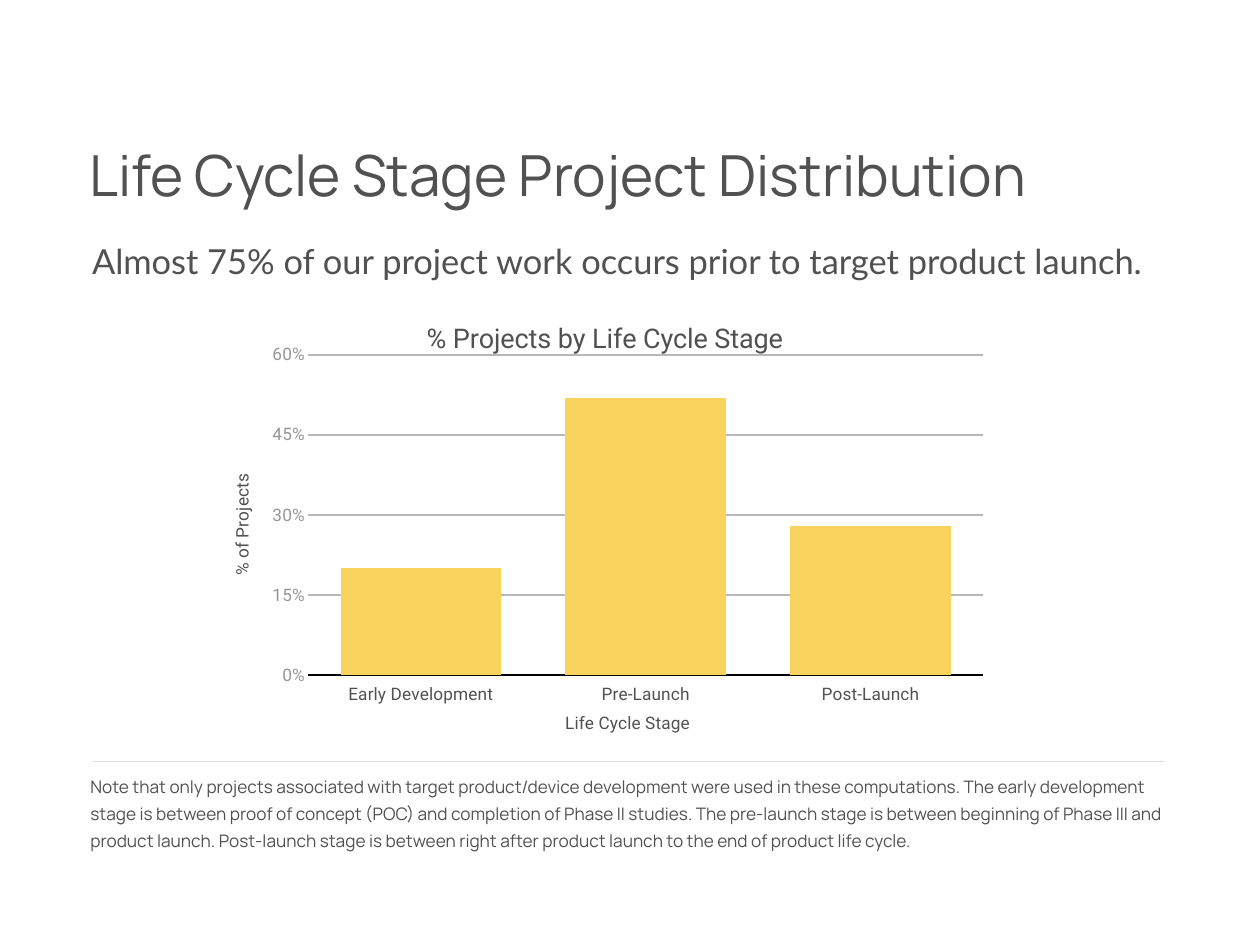
from dataclasses import dataclass

from lxml import etree
from pptx import Presentation
from pptx import util as u
from pptx.chart.data import CategoryChartData
from pptx.dml.color import RGBColor
from pptx.enum import chart as ce
from pptx.enum import shapes, text
from pptx.oxml import ns

WIDTH, HEIGHT = u.Inches(14.22), u.Inches(10.67)


@dataclass(frozen=True)
class Theme:
    ink: str = "515151"
    muted: str = "969696"
    rule: str = "DCDEE0"
    grid: str = "B8B8B8"
    axis: str = "000000"
    bar: str = "F9D35E"
    headline_font: str = "Manrope"
    message_font: str = "Lato"
    chart_font: str = "Roboto"
    headline_size: int = 46
    message_size: int = 28
    note_size: int = 14
    chart_title_size: int = 22
    label_size: int = 14


THEME = Theme()


@dataclass(frozen=True)
class Area:
    """A rectangle in percent of the slide's width and height."""
    left: float
    top: float
    width: float
    height: float

    def lengths(self) -> tuple:
        return (across(self.left), down(self.top),
                across(self.width), down(self.height))


@dataclass(frozen=True)
class TextBlock:
    words: str
    area: Area
    font: str
    size: int
    grows: bool = True
    inset: float = 0
    anchor: text.MSO_ANCHOR = text.MSO_ANCHOR.TOP


BLOCKS = [
    TextBlock("Life Cycle Stage Project Distribution",
              Area(6.89, 13.5, 86.01, 7.59),
              THEME.headline_font, THEME.headline_size,
              inset=0.03, anchor=text.MSO_ANCHOR.MIDDLE),
    TextBlock("Note that only projects associated with target product/device "
              "development were used in these computations. The early "
              "development stage is between proof of concept (POC) and "
              "completion of Phase II studies. The pre-launch stage is between "
              "beginning of Phase III and product launch. Post-launch stage is "
              "between right after product launch to the end of product life "
              "cycle.",
              Area(7.17, 81.54, 85.44, 7.5),
              THEME.headline_font, THEME.note_size),
    TextBlock("Almost 75% of our project work occurs prior to target product "
              "launch.",
              Area(7.31, 24.09, 85.23, 21.18),
              THEME.message_font, THEME.message_size, grows=False),
]
CHART_AREA = Area(18, 31.96, 60.06, 46.3)
PLOT_SHARES = {"x": 0.108, "y": 0.121, "w": 0.892, "h": 0.732}
STAGES = {"Early Development": 0.2, "Pre-Launch": 0.52, "Post-Launch": 0.28}


def across(percent: float) -> int:
    return round(WIDTH * percent / 100)


def down(percent: float) -> int:
    return round(HEIGHT * percent / 100)


def style_font(font, name: str, size: int, color: str) -> None:
    font.name, font.size, font.bold = name, u.Pt(size), False
    font.color.rgb = RGBColor.from_string(color)


def style_line(line, color: str) -> None:
    line.color.rgb = RGBColor.from_string(color)
    line.width = u.Pt(1)


def add_block(page, block: TextBlock) -> None:
    frame = page.shapes.add_textbox(*block.area.lengths()).text_frame
    frame.word_wrap = True
    frame.vertical_anchor = block.anchor
    frame.auto_size = (text.MSO_AUTO_SIZE.SHAPE_TO_FIT_TEXT if block.grows
                       else text.MSO_AUTO_SIZE.NONE)
    frame.margin_left = frame.margin_right = u.Inches(block.inset)
    frame.margin_top = frame.margin_bottom = u.Inches(block.inset)
    para = frame.paragraphs[0]
    para.text = block.words
    para.line_spacing = 1.3
    style_font(para.font, block.font, block.size, THEME.ink)


def add_rule(page) -> None:
    rule = page.shapes.add_connector(
        shapes.MSO_CONNECTOR.STRAIGHT,
        across(92.41), down(80.6), across(7.38), down(80.6))
    style_line(rule.line, THEME.rule)
    etree.SubElement(rule._element.spPr, ns.qn("a:effectLst"))


def write_title(frame, words: str, size: int) -> None:
    para = frame.paragraphs[0]
    para.text = words
    style_font(para.font, THEME.chart_font, size, THEME.ink)


def style_axis(axis, title: str, label_color: str) -> None:
    write_title(axis.axis_title.text_frame, title, THEME.label_size)
    axis.major_tick_mark = axis.minor_tick_mark = ce.XL_TICK_MARK.NONE
    style_font(axis.tick_labels.font, THEME.chart_font, THEME.label_size,
               label_color)


def fix_plot_area(chart) -> None:
    """Place the inner plot area by shares of the chart's size."""
    plot_area = chart._chartSpace.chart.plotArea
    for old in plot_area.findall(ns.qn("c:layout")):
        plot_area.remove(old)
    layout = etree.Element(ns.qn("c:layout"))
    plot_area.insert(0, layout)
    manual = etree.SubElement(layout, ns.qn("c:manualLayout"))
    settings = {"layoutTarget": "inner", "xMode": "edge", "yMode": "edge",
                **PLOT_SHARES}
    for tag, value in settings.items():
        etree.SubElement(manual, ns.qn(f"c:{tag}")).set("val", str(value))


def add_stage_chart(page) -> None:
    data = CategoryChartData(number_format="0%")
    data.categories = list(STAGES)
    data.add_series("Series 1", list(STAGES.values()))
    chart = page.shapes.add_chart(ce.XL_CHART_TYPE.COLUMN_CLUSTERED,
                                  *CHART_AREA.lengths(), data).chart
    chart.has_legend = False
    style_font(chart.font, THEME.chart_font, THEME.label_size, THEME.ink)
    write_title(chart.chart_title.text_frame, "% Projects by Life Cycle Stage",
                THEME.chart_title_size)
    overlay = chart.chart_title._element.find(ns.qn("c:overlay"))
    if overlay is not None:
        overlay.set("val", "1")

    stages = chart.category_axis
    style_axis(stages, "Life Cycle Stage", THEME.ink)
    stages.tick_label_position = ce.XL_TICK_LABEL_POSITION.LOW
    style_line(stages.format.line, THEME.axis)

    percents = chart.value_axis
    style_axis(percents, "% of Projects", THEME.muted)
    body = percents.axis_title.text_frame._txBody.bodyPr
    body.set("rot", "-5400000")
    body.set("vert", "horz")
    percents.minimum_scale, percents.maximum_scale = 0, 0.6
    percents.major_unit = 0.15
    percents.tick_labels.number_format = "0%"
    percents.tick_labels.number_format_is_linked = False
    percents.format.line.fill.background()
    style_line(percents.major_gridlines.format.line, THEME.grid)

    plot = chart.plots[0]
    plot.gap_width, plot.overlap = 40, -10
    plot.vary_by_categories = False
    fill = plot.series[0].format.fill
    fill.solid()
    fill.fore_color.rgb = RGBColor.from_string(THEME.bar)
    fix_plot_area(chart)


def main() -> None:
    deck = Presentation()
    deck.slide_width, deck.slide_height = WIDTH, HEIGHT
    page = deck.slides.add_slide(deck.slide_layouts[6])
    for block in BLOCKS:
        add_block(page, block)
    add_rule(page)
    add_stage_chart(page)
    deck.save("out.pptx")


if __name__ == "__main__":
    main()
